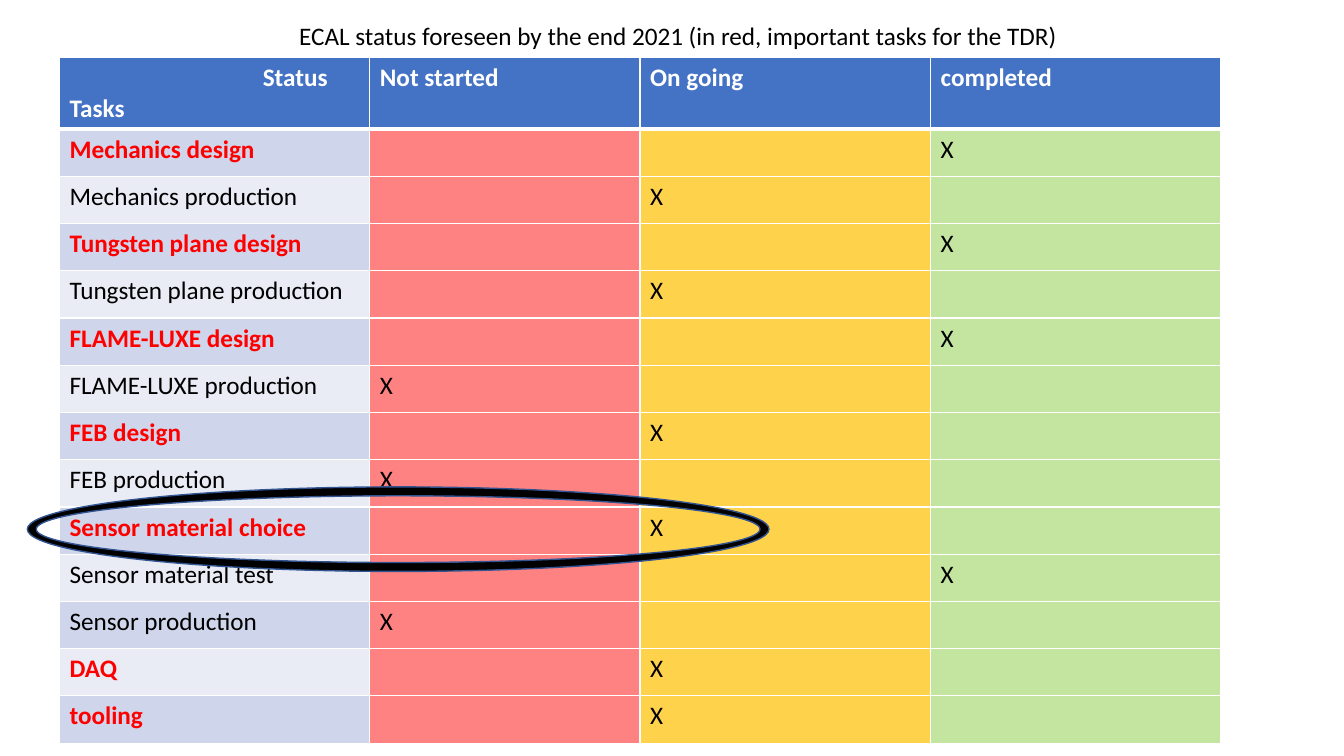
from dataclasses import dataclass

from lxml import etree
from pptx import Presentation
from pptx import util as u
from pptx.dml import color
from pptx.enum import shapes, text
from pptx.oxml import ns


@dataclass(frozen=True)
class Theme:
    font: str = "Calibri"
    size: int = 18
    black: str = "000000"
    white: str = "FFFFFF"
    important: str = "FF0000"
    header: str = "4472C4"
    bands: tuple = ("CFD5EA", "E9EBF5")
    statuses: tuple = (("FF0000", 49), ("FFC000", 70), ("92D050", 54))
    ring_line: str = "325491"
    thin: int = 1
    thick: int = 3


THEME = Theme()
STATUSES = ("Not started", "On going", "completed")
TASKS = (
    ("Mechanics design", "completed", True),
    ("Mechanics production", "On going", False),
    ("Tungsten plane design", "completed", True),
    ("Tungsten plane production", "On going", False),
    ("FLAME-LUXE design", "completed", True),
    ("FLAME-LUXE production", "Not started", False),
    ("FEB design", "On going", True),
    ("FEB production", "Not started", False),
    ("Sensor material choice", "On going", True),
    ("Sensor material test", "completed", False),
    ("Sensor production", "Not started", False),
    ("DAQ", "On going", True),
    ("tooling", "On going", True),
)
COLUMN_WIDTHS = (7.82, 6.81, 7.32, 7.32)
HEADER_HEIGHT = 1.78
ROW_HEIGHT = 1.19


def apply_format(target, values):
    for name, value in values.items():
        setattr(target, name, value)


def write_paragraph(paragraph, content, font_color, bold=False):
    run = paragraph.add_run()
    run.text = content
    apply_format(run.font, {"name": THEME.font, "size": u.Pt(THEME.size), "bold": bold})
    run.font.color.rgb = color.RGBColor.from_string(font_color)


def paint(fill, fill_color):
    fill.solid()
    fill.fore_color.rgb = color.RGBColor.from_string(fill_color)


def style_cell(cell, fill_color, opacity=100, top=THEME.thin, bottom=THEME.thin):
    paint(cell.fill, fill_color)
    properties = cell._tc.get_or_add_tcPr()
    if opacity < 100:
        rgb = properties.find(".//" + ns.qn("a:srgbClr"))
        etree.SubElement(rgb, ns.qn("a:alpha"), val=str(opacity * 1000))
    borders = {"lnL": THEME.thin, "lnR": THEME.thin, "lnT": top, "lnB": bottom}
    for position, (tag, width) in enumerate(borders.items()):
        border = etree.Element(ns.qn("a:" + tag), w=str(u.Pt(width)))
        solid = etree.SubElement(border, ns.qn("a:solidFill"))
        etree.SubElement(solid, ns.qn("a:srgbClr"), val=THEME.white)
        properties.insert(position, border)


def fill_header(table):
    for cell, label in zip(table.rows[0].cells, ("Status",) + STATUSES):
        write_paragraph(cell.text_frame.paragraphs[0], label, THEME.white, True)
        style_cell(cell, THEME.header, bottom=THEME.thick)
    corner = table.cell(0, 0).text_frame
    corner.paragraphs[0]._p.get_or_add_pPr().set("marL", str(u.Cm(4.87)))
    write_paragraph(corner.add_paragraph(), "Tasks", THEME.white, True)


def fill_task(table, row, task, status, important):
    top = THEME.thick if row == 1 else THEME.thin
    name_cell = table.cell(row, 0)
    name_color = THEME.important if important else THEME.black
    write_paragraph(name_cell.text_frame.paragraphs[0], task, name_color, important)
    style_cell(name_cell, THEME.bands[(row - 1) % 2], top=top)
    for column, (fill_color, opacity) in enumerate(THEME.statuses, 1):
        cell = table.cell(row, column)
        if STATUSES[column - 1] == status:
            write_paragraph(cell.text_frame.paragraphs[0], "X", THEME.black)
        style_cell(cell, fill_color, opacity, top)


def add_status_table(slide):
    height = HEADER_HEIGHT + ROW_HEIGHT * len(TASKS)
    table = slide.shapes.add_table(
        len(TASKS) + 1, len(COLUMN_WIDTHS),
        u.Cm(1.5), u.Cm(1.45), u.Cm(sum(COLUMN_WIDTHS)), u.Cm(height),
    ).table
    table.horz_banding = False
    for column, width in zip(table.columns, COLUMN_WIDTHS):
        column.width = u.Cm(width)
    for row in table.rows:
        row.height = u.Cm(ROW_HEIGHT)
    table.rows[0].height = u.Cm(HEADER_HEIGHT)
    fill_header(table)
    for row, task in enumerate(TASKS, 1):
        fill_task(table, row, *task)


def add_title(slide, content):
    box = slide.shapes.add_textbox(u.Cm(7.29), u.Cm(0.38), u.Cm(21.21), u.Cm(1.02))
    apply_format(box.text_frame, {
        "word_wrap": True,
        "auto_size": text.MSO_AUTO_SIZE.SHAPE_TO_FIT_TEXT,
    })
    write_paragraph(box.text_frame.paragraphs[0], content, THEME.black)


def add_highlight_ring(slide):
    ring = slide.shapes.add_shape(
        shapes.MSO_SHAPE.DONUT, u.Cm(0.69), u.Cm(12.27), u.Cm(18.69), u.Cm(2.13)
    )
    ring.shadow.inherit = False
    ring.adjustments[0] = 0.105
    paint(ring.fill, THEME.black)
    paint(ring.line.fill, THEME.ring_line)
    ring.line.width = u.Pt(THEME.thin)


def main():
    presentation = Presentation()
    apply_format(presentation, {"slide_width": u.Cm(33.87), "slide_height": u.Cm(19.05)})
    slide = presentation.slides.add_slide(presentation.slide_layouts[6])
    add_status_table(slide)
    add_title(slide, "ECAL status foreseen by the end 2021 (in red, important tasks for the TDR)")
    add_highlight_ring(slide)
    presentation.save("out.pptx")


if __name__ == "__main__":
    main()
